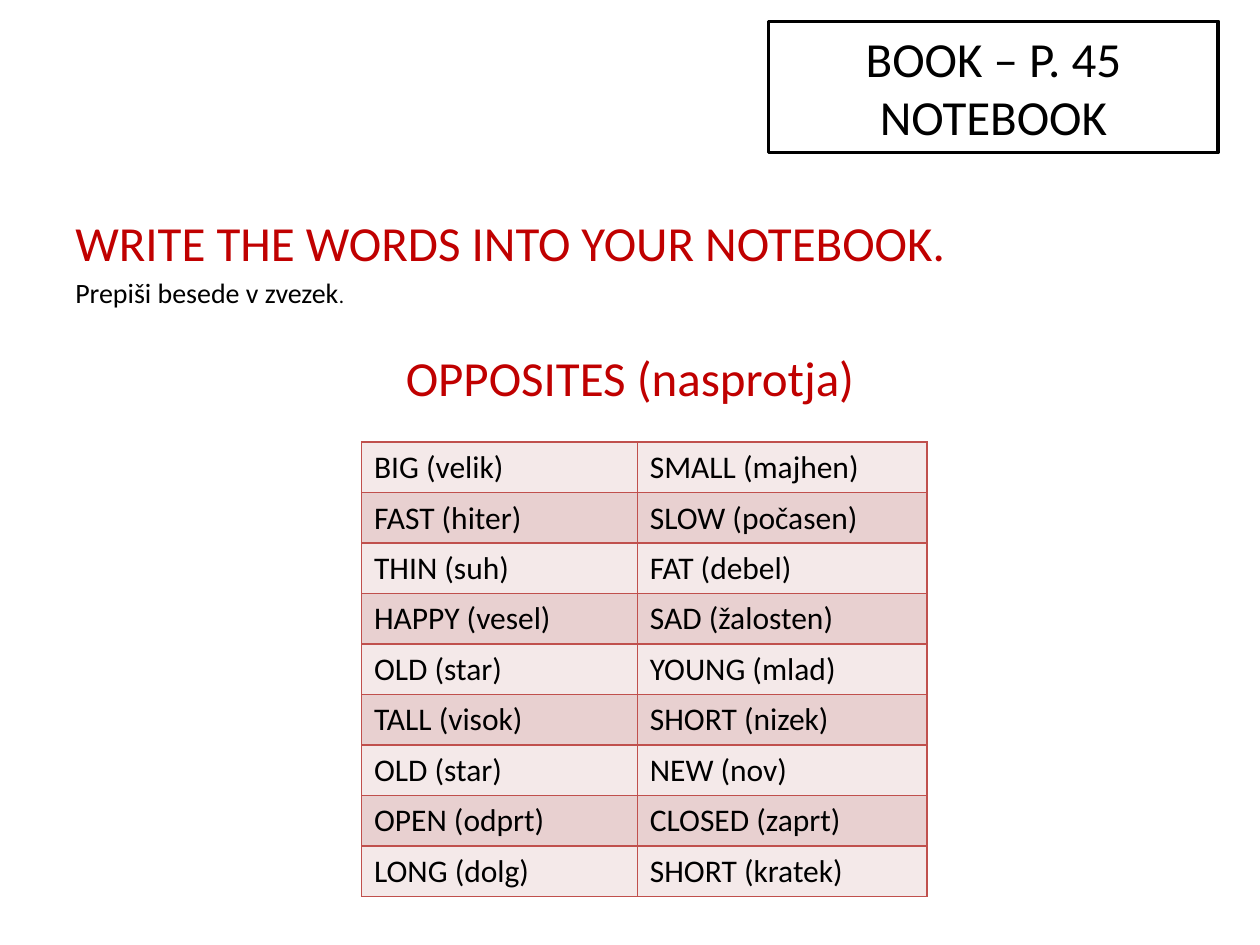
import pptx
import pptx.dml.color
import pptx.enum.shapes
import pptx.enum.text
import pptx.oxml
import pptx.oxml.ns
import pptx.util
from dataclasses import dataclass

Pt = pptx.util.Pt
Align = pptx.enum.text.PP_ALIGN
Anchor = pptx.enum.text.MSO_ANCHOR


@dataclass(frozen=True)
class Theme:
    font: str = "Calibri"
    black: str = "000000"
    white: str = "FFFFFF"
    red: str = "C00000"
    border: str = "C0504D"
    bands: tuple = ("F4E9E9", "E8D0D0")
    heading: int = 28
    cell: int = 18
    body: int = 16
    small: int = 12


class SlideBuilder:
    def __init__(self, slide, theme):
        self.slide = slide
        self.theme = theme

    def color(self, value):
        return pptx.dml.color.RGBColor.from_string(value)

    def style(self, paragraph, size, color, align=Align.LEFT, before=0):
        paragraph.alignment = align
        paragraph.space_before = Pt(before)
        paragraph.font.name = self.theme.font
        paragraph.font.size = Pt(size)
        paragraph.font.color.rgb = self.color(color)

    def text(self, left, top, width, height, lines):
        """Each line is (runs, size, color, align, space before)."""
        box = self.slide.shapes.add_textbox(Pt(left), Pt(top), Pt(width), Pt(height))
        frame = box.text_frame
        frame.word_wrap = True
        frame.margin_top = Pt(5)
        for index, (runs, *style) in enumerate(lines):
            paragraph = frame.add_paragraph() if index else frame.paragraphs[0]
            for words, size in runs:
                run = paragraph.add_run()
                run.text = words
                if size:
                    run.font.size = Pt(size)
            self.style(paragraph, *style)

    def label(self, left, top, width, height, lines):
        shape = self.slide.shapes.add_shape(
            pptx.enum.shapes.MSO_SHAPE.RECTANGLE, Pt(left), Pt(top), Pt(width), Pt(height))
        shape.shadow.inherit = False
        shape.fill.solid()
        shape.fill.fore_color.rgb = self.color(self.theme.white)
        shape.line.color.rgb = self.color(self.theme.black)
        shape.line.width = Pt(2)
        frame = shape.text_frame
        frame.word_wrap = True
        frame.vertical_anchor = Anchor.MIDDLE
        frame.text = "\n".join(lines)
        for paragraph in frame.paragraphs:
            self.style(paragraph, self.theme.heading, self.theme.black, Align.CENTER)

    def border(self, cell):
        properties = cell._tc.get_or_add_tcPr()
        for index, side in enumerate(("lnL", "lnR", "lnT", "lnB")):
            properties.insert(index, pptx.oxml.parse_xml(
                f'<a:{side} {pptx.oxml.ns.nsdecls("a")} w="{Pt(1)}"><a:solidFill>'
                f'<a:srgbClr val="{self.theme.border}"/></a:solidFill></a:{side}>'))

    def table(self, left, top, widths, row_height, rows):
        table = self.slide.shapes.add_table(
            len(rows), len(widths), Pt(left), Pt(top),
            Pt(sum(widths)), Pt(row_height * len(rows))).table
        table.first_row = False
        for column, width in zip(table.columns, widths):
            column.width = Pt(width)
        for row_index, words in enumerate(rows):
            table.rows[row_index].height = Pt(row_height)
            for column_index, word in enumerate(words):
                cell = table.cell(row_index, column_index)
                cell.text = word
                cell.fill.solid()
                cell.fill.fore_color.rgb = self.color(self.theme.bands[row_index % 2])
                self.style(cell.text_frame.paragraphs[0], self.theme.cell, self.theme.black)
                self.border(cell)


def main():
    presentation = pptx.Presentation()
    presentation.slide_width, presentation.slide_height = Pt(720), Pt(540)
    slide = presentation.slides.add_slide(presentation.slide_layouts[6])
    theme = Theme()
    builder = SlideBuilder(slide, theme)

    # Instructions and table heading
    builder.text(36, 116.6, 648, 124.6, [
        ([("WRITE THE WORDS INTO YOUR NOTEBOOK.", None)],
         theme.heading, theme.red, Align.LEFT, 0),
        ([("Prepiši besede v zvezek", None), (".", theme.small)],
         theme.body, theme.black, Align.LEFT, 2),
        ([("OPPOSITES (nasprotja)", None)],
         theme.heading, theme.red, Align.CENTER, 22),
    ])

    # Page reference
    builder.label(439.2, 12.2, 257, 75, ["BOOK – P. 45", "NOTEBOOK"])

    # Opposites
    builder.table(206.6, 252.7, [157.6, 165.6], 28.8, [
        ("BIG (velik)", "SMALL (majhen)"),
        ("FAST (hiter)", "SLOW (počasen)"),
        ("THIN (suh)", "FAT (debel)"),
        ("HAPPY (vesel)", "SAD (žalosten)"),
        ("OLD (star)", "YOUNG (mlad)"),
        ("TALL (visok)", "SHORT (nizek)"),
        ("OLD (star)", "NEW (nov)"),
        ("OPEN (odprt)", "CLOSED (zaprt)"),
        ("LONG (dolg)", "SHORT (kratek)"),
    ])

    presentation.save("out.pptx")


if __name__ == "__main__":
    main()
